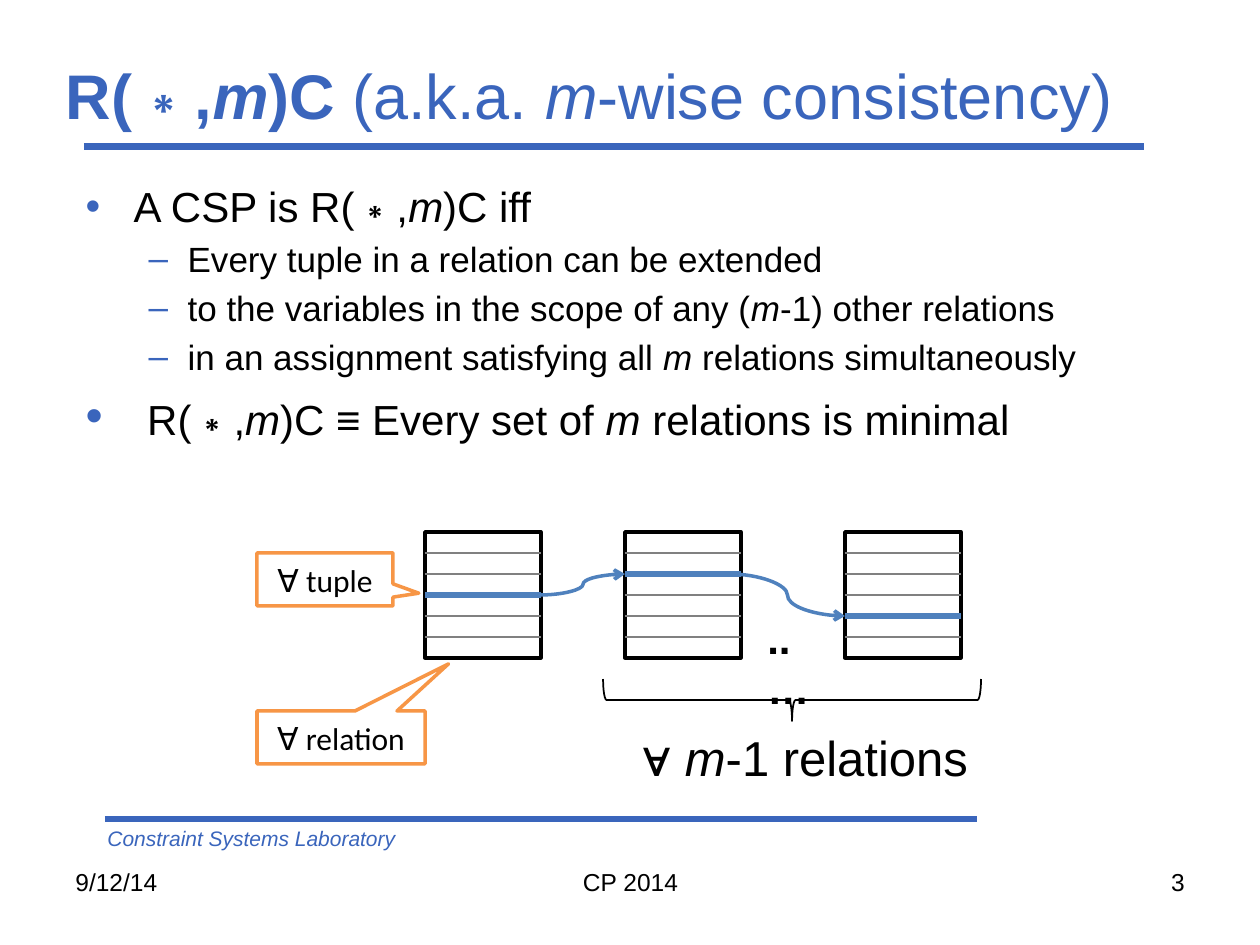
from lxml import etree
from pptx import Presentation
from pptx.dml.color import RGBColor
from pptx.enum.shapes import MSO_CONNECTOR, MSO_SHAPE
from pptx.enum.text import MSO_ANCHOR, MSO_AUTO_SIZE, PP_ALIGN
from pptx.oxml.ns import qn
from pptx.util import Pt

PX = 914400 / 126
LEFT, CENTER, RIGHT = PP_ALIGN.LEFT, PP_ALIGN.CENTER, PP_ALIGN.RIGHT
MIDDLE = MSO_ANCHOR.MIDDLE
NO_AUTOFIT = MSO_AUTO_SIZE.NONE
STRAIGHT, CURVE = MSO_CONNECTOR.STRAIGHT, MSO_CONNECTOR.CURVE
RECTANGLE, BRACE = MSO_SHAPE.RECTANGLE, MSO_SHAPE.RIGHT_BRACE
CALLOUT = MSO_SHAPE.RECTANGULAR_CALLOUT
COLORS = {"blue": "3A65BC", "link": "4F81BD", "orange": "F79646",
          "gray": "808080", "black": "000000", "white": "FFFFFF"}
RGB = {name: RGBColor.from_string(value) for name, value in COLORS.items()}


def write(paragraph, text, size=24, color="black", font="Arial",
          bold=False, italic=False, align=LEFT):
    """Add text to a paragraph; parts between underscores are italic."""
    paragraph.alignment = align
    for index, part in enumerate(text.split("_")):
        if part:
            run = paragraph.add_run()
            run.text = part
            run.font.name = font
            run.font.size = Pt(size)
            run.font.bold = bold
            run.font.italic = italic or index % 2 == 1
            run.font.color.rgb = RGB[color]


def connect(start, end, color, width, kind=STRAIGHT, arrow=False):
    points = [round(value * PX) for value in (*start, *end)]
    connector = slide.shapes.add_connector(kind, *points)
    connector.line.color.rgb = RGB[color]
    connector.line.width = Pt(width)
    properties = connector._element.spPr
    if arrow:
        etree.SubElement(properties.find(qn("a:ln")), qn("a:tailEnd"), type="arrow")
    etree.SubElement(properties, qn("a:effectLst"))
    return connector


presentation = Presentation()
presentation.slide_width = round(1260 * PX)
presentation.slide_height = round(945 * PX)
slide = presentation.slides.add_slide(presentation.slide_layouts[1])
title, body = slide.placeholders

# Rules under the title and above the footer
connect((84, 147), (1144, 147), "blue", 4)
connect((105, 819), (977, 819), "blue", 4)

# Title and body placeholders
for placeholder, box in ((title, (53, 42, 1134, 95)), (body, (73, 174, 1070, 341))):
    (placeholder.left, placeholder.top,
     placeholder.width, placeholder.height) = [round(value * PX) for value in box]
    placeholder.text_frame.auto_size = NO_AUTOFIT

title.text_frame.vertical_anchor = MIDDLE
title.text_frame.margin_top = round(16 * PX)
heading = title.text_frame.paragraphs[0]
write(heading, "R(∗,_m_)C ", size=36, color="blue", bold=True)
write(heading, "(a.k.a. _m_-wise consistency)", size=36, color="blue")

# Bulleted list: level, runs of (text, size)
bullets = [
    (0, [("A CSP is R(∗,_m_)C iff", 24)]),
    (1, [("Every tuple in a relation can be extended", 20)]),
    (1, [("to the variables in the scope of any (_m_-1) other relations", 20)]),
    (1, [("in an assignment satisfying all _m_ relations simultaneously", 20)]),
    (0, [(" ", 28), ("R(∗,_m_)C ≡ Every set of _m_ relations is minimal", 24)]),
]
levels = [("•", 48, 48, 5), ("–", 102, 39, 4)]  # mark, margin, hanging, space before
for index, (level, runs) in enumerate(bullets):
    mark, margin, hanging, space = levels[level]
    frame = body.text_frame
    paragraph = frame.add_paragraph() if index else frame.paragraphs[0]
    paragraph.level = level
    paragraph.space_before = Pt(space if index else 0)
    properties = paragraph._p.get_or_add_pPr()
    properties.set("marL", str(round(margin * PX)))
    properties.set("indent", str(round(-hanging * PX)))
    bullet_color = etree.SubElement(properties, qn("a:buClr"))
    etree.SubElement(bullet_color, qn("a:srgbClr"), val=COLORS["blue"])
    etree.SubElement(properties, qn("a:buFont"), typeface="Arial")
    etree.SubElement(properties, qn("a:buChar"), char=mark)
    for text, size in runs:
        write(paragraph, text, size=size)

# Relations as ruled boxes, each with one highlighted tuple
TOP, WIDTH, ROW, ROWS = 532, 116, 21, 6
for left, highlighted in ((425, 3), (625, 2), (845, 4)):
    relation = slide.shapes.add_shape(
        RECTANGLE, *[round(value * PX) for value in (left, TOP, WIDTH, ROW * ROWS)])
    relation.shadow.inherit = False
    relation.fill.solid()
    relation.fill.fore_color.rgb = RGB["white"]
    relation.line.color.rgb = RGB["black"]
    relation.line.width = Pt(2)
    for row in range(1, ROWS):
        y = TOP + row * ROW
        color, width = ("link", 3) if row == highlighted else ("gray", 0.75)
        tuple_line = connect((left, y), (left + WIDTH, y), color, width)
        if row * 2 == ROWS:
            tuple_line.begin_connect(relation, 1)
            tuple_line.end_connect(relation, 3)

# Arrows from tuple to tuple
for start, end in (((541, 595), (625, 574)), ((730, 574), (845, 616))):
    connect(start, end, "link", 2, kind=CURVE, arrow=True)

# Brace below the other relations
brace = slide.shapes.add_shape(
    BRACE, *[round(value * PX) for value in (771, 511, 42, 378)])
brace.rotation = 90
brace.adjustments[0] = 0.083
brace.adjustments[1] = 0.5
brace.shadow.inherit = False
brace.fill.background()
brace.line.color.rgb = RGB["black"]
brace.line.width = Pt(1)

# Labels and footer
labels = [
    ((755, 606, 78, 63), "..…", {"bold": True}),
    ((630, 721, 372, 72), "∀ _m_-1 relations", {"size": 28}),
    ((95, 819, 661, 38), "Constraint Systems Laboratory",
     {"size": 12, "color": "blue", "italic": True}),
    ((63, 861, 294, 66), "9/12/14", {"size": 14}),
    ((431, 861, 399, 66), "CP 2014", {"size": 14, "align": CENTER}),
    ((903, 861, 294, 66), "3", {"size": 14, "align": RIGHT}),
]
for box, text, style in labels:
    label = slide.shapes.add_textbox(*[round(value * PX) for value in box])
    label.text_frame.word_wrap = True
    write(label.text_frame.paragraphs[0], text, **style)

# Callouts
callouts = [
    ((257, 553, 136, 53), "∀ tuple", (0.69, 0.26)),
    ((257, 711, 168, 53), "∀ relation", (0.64, -1.39)),
]
for box, text, tip in callouts:
    callout = slide.shapes.add_shape(CALLOUT, *[round(value * PX) for value in box])
    callout.adjustments[0], callout.adjustments[1] = tip
    callout.shadow.inherit = False
    callout.fill.solid()
    callout.fill.fore_color.rgb = RGB["white"]
    callout.line.color.rgb = RGB["orange"]
    callout.line.width = Pt(2)
    frame = callout.text_frame
    frame.margin_left = frame.margin_right = frame.margin_top = frame.margin_bottom = 0
    frame.vertical_anchor = MIDDLE
    write(frame.paragraphs[0], text, size=18, font="Calibri", align=CENTER)

presentation.save("out.pptx")
